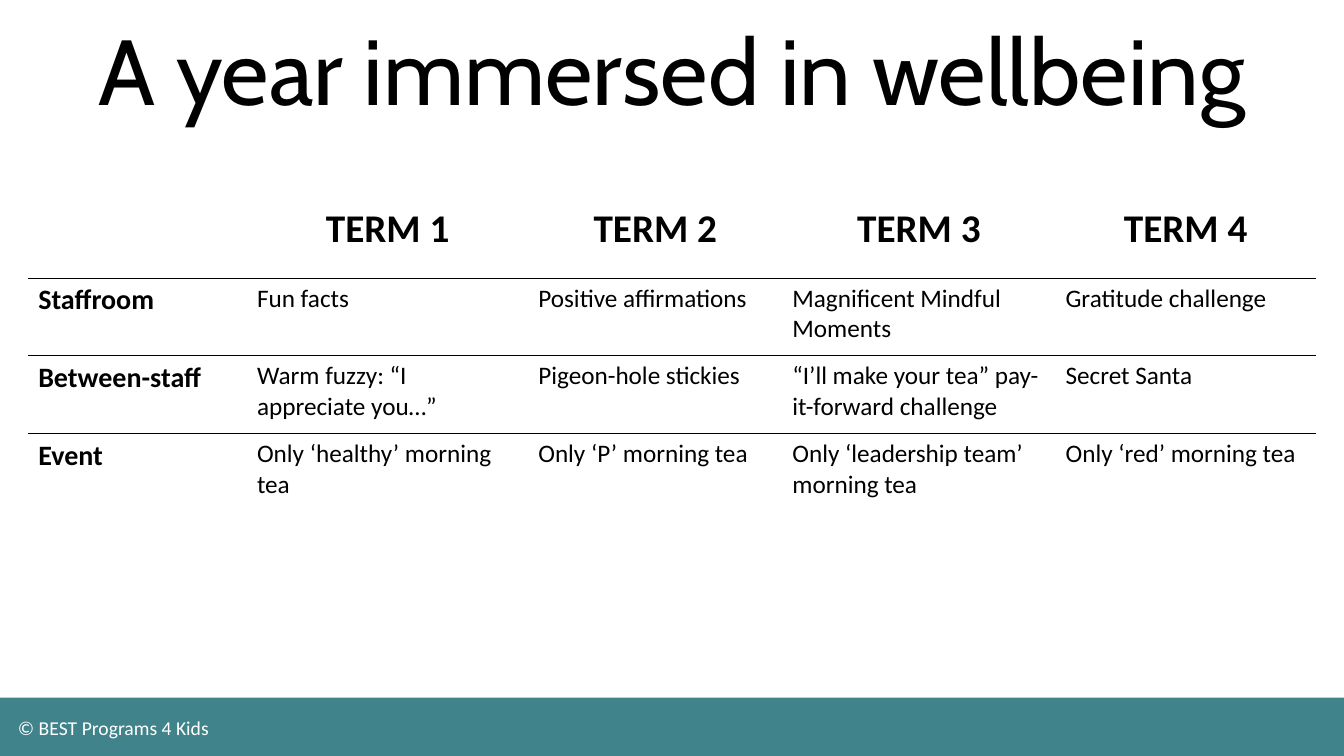
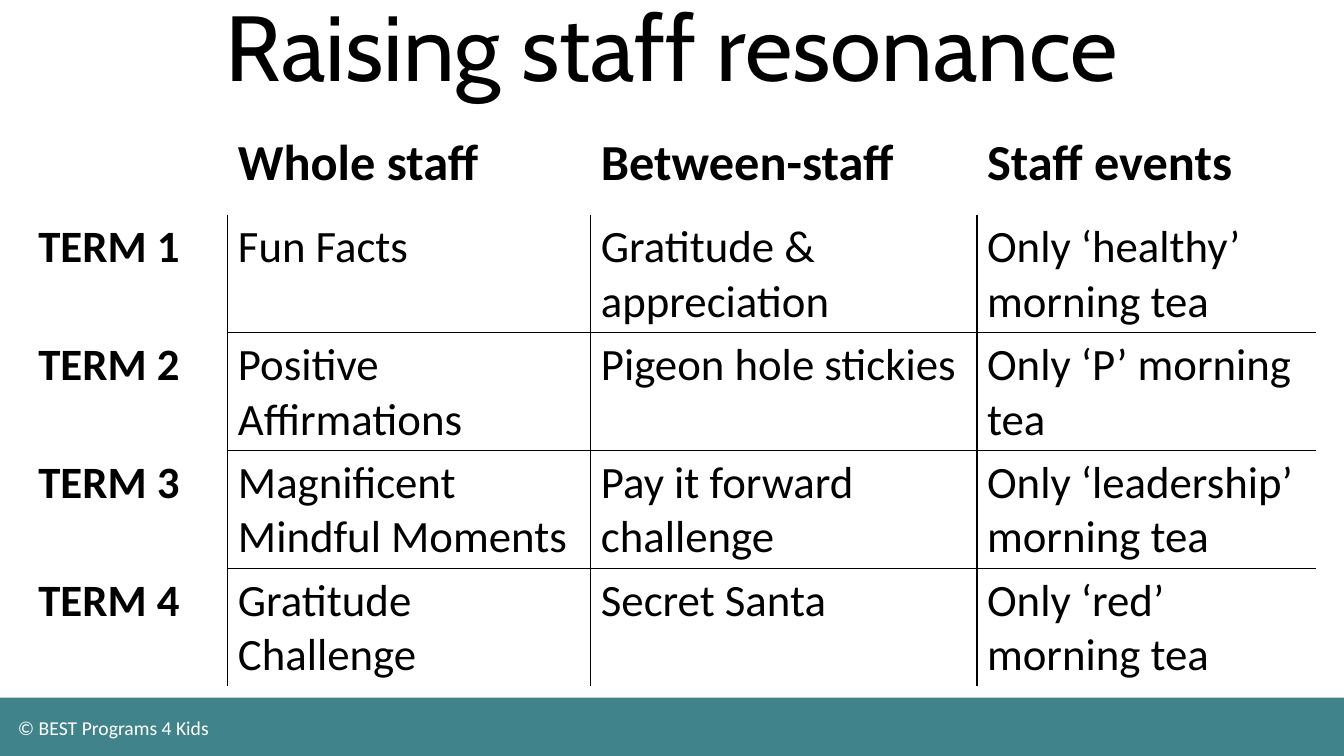
import pptx
import pptx.dml.color
import pptx.enum.shapes
import pptx.enum.text
import pptx.oxml
import pptx.oxml.ns
import pptx.util

Inches = pptx.util.Inches
ALIGN = pptx.enum.text.PP_ALIGN
ANCHOR = pptx.enum.text.MSO_ANCHOR

BLACK, WHITE, TEAL = "000000", "FFFFFF", "40838B"
LEFT, WIDTH = 0.28, 12.77
TITLE = {"name": "Cabin", "size": 66, "bold": False, "color": BLACK}
FOOTER = {"name": "Calibri", "size": 14, "bold": False, "color": WHITE}

YEAR = {
    "top": 1.99,
    "cols": [2.17, 2.79, 2.52, 2.71, 2.58],
    "heights": [0.77] * 4,
    "sizes": {"header": 28, "label": 20, "body": 18},
    "header_align": ALIGN.CENTER,
    "first_rule": (1, 0),
    "column_rules": False,
    "rows": [
        ["", "TERM 1", "TERM 2", "TERM 3", "TERM 4"],
        ["Staffroom", "Fun facts", "Positive affirmations",
         "Magnificent Mindful Moments", "Gratitude challenge"],
        ["Between-staff", "Warm fuzzy: “I appreciate you…”", "Pigeon-hole stickies",
         "“I’ll make your tea” pay-it-forward challenge", "Secret Santa"],
        ["Event", "Only ‘healthy’ morning tea", "Only ‘P’ morning tea",
         "Only ‘leadership team’ morning tea", "Only ‘red’ morning tea"],
    ],
}

RESONANCE = {
    "top": 1.26,
    "cols": [1.98, 3.6, 3.83, 3.36],
    "heights": [0.87] + [1.17] * 4,
    "sizes": {"header": 36, "label": 32, "body": 32},
    "header_align": ALIGN.LEFT,
    "first_rule": (2, 1),
    "column_rules": True,
    "rows": [
        ["", "Whole staff", "Between-staff", "Staff events"],
        ["TERM 1", "Fun Facts", "Gratitude & appreciation", "Only ‘healthy’ morning tea"],
        ["TERM 2", "Positive Affirmations", "Pigeon hole stickies", "Only ‘P’ morning tea"],
        ["TERM 3", "Magnificent Mindful Moments", "Pay it forward challenge",
         "Only ‘leadership’ morning tea"],
        ["TERM 4", "Gratitude Challenge", "Secret Santa", "Only ‘red’ morning tea"],
    ],
}


def rgb(value):
    return pptx.dml.color.RGBColor.from_string(value)


def write(tf, text, style, align=ALIGN.LEFT):
    p = tf.paragraphs[0]
    p.alignment = align
    r = p.add_run()
    r.text = text
    formats = {"name": style["name"], "size": pptx.util.Pt(style["size"]), "bold": style["bold"]}
    for key, value in formats.items():
        setattr(r.font, key, value)
    r.font.color.rgb = rgb(style["color"])
    return p


def add_title(slide, text, top):
    sp = slide.shapes.title
    box = {"left": LEFT, "top": top, "width": WIDTH, "height": 1.24}
    for key, value in box.items():
        setattr(sp, key, Inches(value))
    tf = sp.text_frame
    tf.auto_size = pptx.enum.text.MSO_AUTO_SIZE.NONE
    tf.vertical_anchor = ANCHOR.MIDDLE
    p = write(tf, text, TITLE, ALIGN.CENTER)
    p.line_spacing = 0.9


def add_footer(slide, width):
    band = slide.shapes.add_shape(pptx.enum.shapes.MSO_SHAPE.RECTANGLE,
                                  0, Inches(6.92), width, Inches(0.59))
    band.shadow.inherit = False
    band.fill.solid()
    band.fill.fore_color.rgb = rgb(TEAL)
    band.line.fill.background()
    sp = slide.shapes.add_textbox(Inches(0.08), Inches(7.05), Inches(2.7), Inches(0.34))
    sp.text_frame.word_wrap = True
    write(sp.text_frame, "© BEST Programs 4 Kids", FOOTER)


def set_borders(cell, ruled):
    tc_pr = cell._tc.get_or_add_tcPr()
    for side in "LRTB":
        fill = (f'<a:solidFill><a:srgbClr val="{BLACK}"/></a:solidFill>'
                if side in ruled else "<a:noFill/>")
        tc_pr.append(pptx.oxml.parse_xml(
            f'<a:ln{side} {pptx.oxml.ns.nsdecls("a")} w="12700">{fill}</a:ln{side}>'))


def ruled_sides(spec, i, j):
    first_row, first_col = spec["first_rule"]

    def row_rule(edge):
        return first_row <= edge < len(spec["rows"]) and j >= first_col

    def column_rule(edge):
        return spec["column_rules"] and i > 0 and 0 < edge < len(spec["cols"])

    sides = {"L": column_rule(j), "R": column_rule(j + 1),
             "T": row_rule(i), "B": row_rule(i + 1)}
    return [side for side, ruled in sides.items() if ruled]


def add_grid(slide, spec):
    rows, cols, heights = spec["rows"], spec["cols"], spec["heights"]
    table = slide.shapes.add_table(len(rows), len(cols), Inches(LEFT), Inches(spec["top"]),
                                   Inches(WIDTH), Inches(sum(heights))).table
    table.first_row = table.horz_banding = False
    for column, width in zip(table.columns, cols):
        column.width = Inches(width)
    for i, texts in enumerate(rows):
        table.rows[i].height = Inches(heights[i])
        for j, text in enumerate(texts):
            cell = table.cell(i, j)
            set_borders(cell, ruled_sides(spec, i, j))
            cell.fill.background()
            if not text:
                continue
            role = "header" if i == 0 else "label" if j == 0 else "body"
            style = {"name": "Calibri", "size": spec["sizes"][role],
                     "bold": role != "body", "color": BLACK}
            align = spec["header_align"] if role == "header" else ALIGN.LEFT
            write(cell.text_frame, text, style, align)


def main():
    prs = pptx.Presentation()
    prs.slide_width, prs.slide_height = Inches(13.33), Inches(7.5)
    for title, top, spec in [("A year immersed in wellbeing", 0.13, YEAR),
                             ("Raising staff resonance", -0.11, RESONANCE)]:
        slide = prs.slides.add_slide(prs.slide_layouts[5])
        add_title(slide, title, top)
        add_footer(slide, prs.slide_width)
        add_grid(slide, spec)
    prs.save("out.pptx")


if __name__ == "__main__":
    main()
